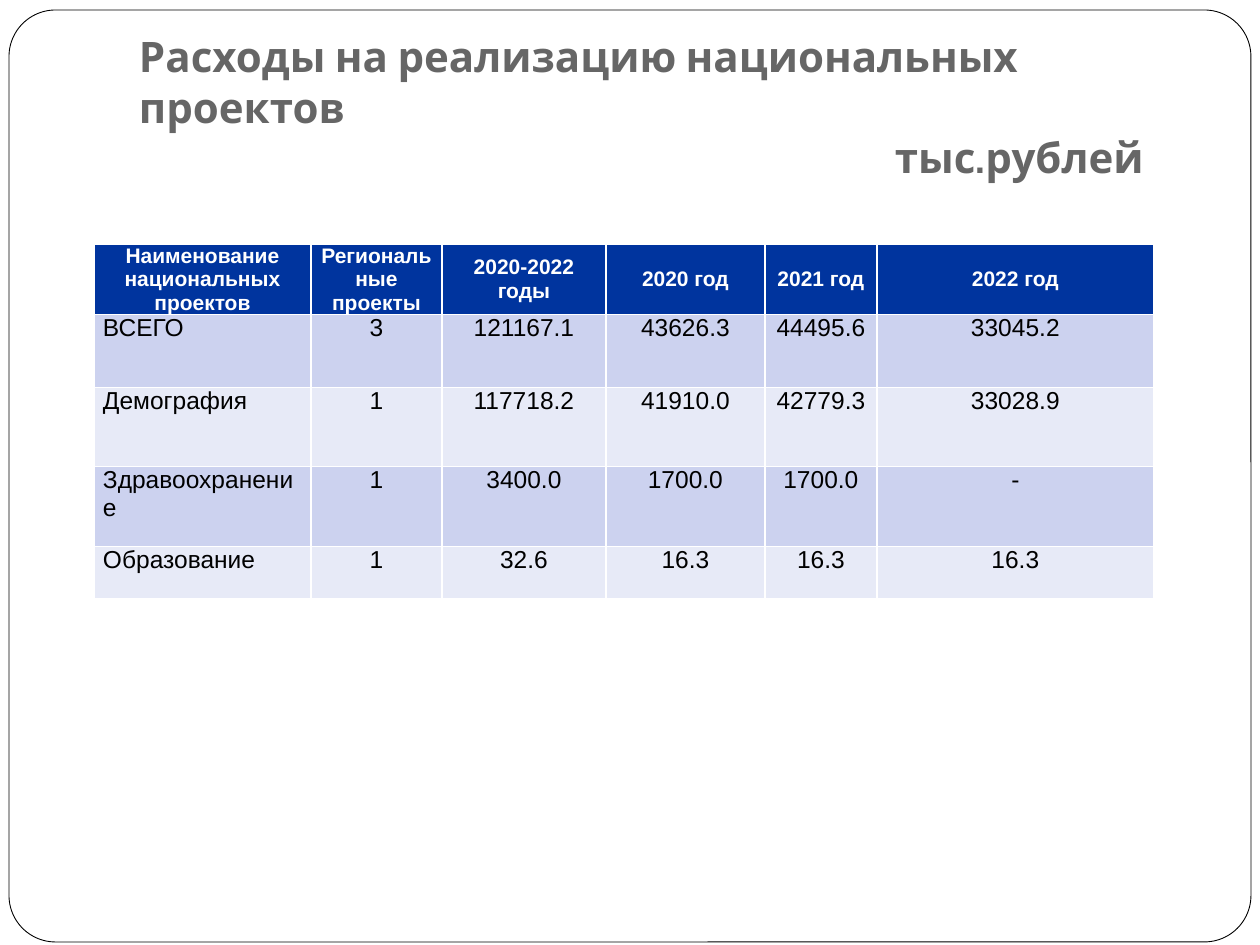
"""Build the slide with national project spending by year."""
from dataclasses import dataclass

from lxml import etree
from pptx import Presentation
from pptx import util as u
from pptx.dml.color import RGBColor
from pptx.enum import shapes, text
from pptx.oxml.ns import qn


@dataclass(frozen=True)
class Theme:
    title_font: str = "Cabin"
    body_font: str = "Arial"
    title_size: int = 24
    head_size: int = 12
    body_size: int = 14
    title: str = "666666"
    ink: str = "000000"
    paper: str = "FFFFFF"
    head: str = "00349E"
    bands: tuple = ("E7EAF7", "CCD2EF")


def px(n):
    return u.Emu(round(n * u.Inches(1) / 126))


def style(p, name, size, color, bold):
    p.font.name, p.font.size, p.font.bold = name, u.Pt(size), bold
    p.font.color.rgb = RGBColor.from_string(color)


theme = Theme()
prs = Presentation()
prs.slide_width, prs.slide_height = px(1260), px(945)
s = prs.slides.add_slide(prs.slide_layouts[5])

frame = s.shapes.add_shape(shapes.MSO_SHAPE.ROUNDED_RECTANGLE, px(9), px(10), px(1242), px(932))
frame.adjustments[0] = 0.05
frame.shadow.inherit = False
frame.fill.solid()
frame.fill.fore_color.rgb = RGBColor.from_string(theme.paper)
frame.line.color.rgb = RGBColor.from_string(theme.ink)
frame.line.width = u.Pt(0.5)

title = s.shapes.title
frame._element.addnext(title._element)
title.left, title.top, title.width, title.height = px(126), px(38), px(1071), px(157)
tf = title.text_frame
tf.auto_size = text.MSO_AUTO_SIZE.NONE
tf.word_wrap = True
tf.vertical_anchor = text.MSO_ANCHOR.BOTTOM
tf.margin_left = tf.margin_right = tf.margin_bottom = px(13)
tf.margin_top = px(6)
p = tf.paragraphs[0]
p.text = "Расходы на реализацию национальных проектов\v\tтыс.рублей"
p.alignment = text.PP_ALIGN.LEFT
style(p, theme.title_font, theme.title_size, theme.title, True)
tabs = etree.Element(qn("a:tabLst"))
etree.SubElement(tabs, qn("a:tab"), pos=str(px(756)), algn="l")
p._p.pPr.insert(0, tabs)

rows = [
    ("Наименование национальных проектов", "Региональные проекты", "2020-2022 годы",
     "2020 год", "2021 год", "2022 год"),
    ("ВСЕГО", "3", "121167.1", "43626.3", "44495.6", "33045.2"),
    ("Демография", "1", "117718.2", "41910.0", "42779.3", "33028.9"),
    ("Здравоохранение", "1", "3400.0", "1700.0", "1700.0", "-"),
    ("Образование", "1", "32.6", "16.3", "16.3", "16.3"),
]
widths = [217, 131, 164, 159, 112, 277]
heights = [52, 73, 79, 80, 52]
table = s.shapes.add_table(len(rows), len(widths), px(94), px(244),
                           px(sum(widths)), px(sum(heights))).table
for column, width in zip(table.columns, widths):
    column.width = px(width)
for i, (values, height) in enumerate(zip(rows, heights)):
    table.rows[i].height = px(height)
    is_head = i == 0
    for j, value in enumerate(values):
        cell = table.cell(i, j)
        cell.fill.solid()
        cell.fill.fore_color.rgb = RGBColor.from_string(theme.head if is_head else theme.bands[i % 2])
        cell.margin_left = cell.margin_right = px(9)
        cell.margin_top = cell.margin_bottom = 0
        cell.vertical_anchor = text.MSO_ANCHOR.MIDDLE if is_head else text.MSO_ANCHOR.TOP
        p = cell.text_frame.paragraphs[0]
        p.text = value
        p.alignment = text.PP_ALIGN.CENTER if is_head or j else text.PP_ALIGN.LEFT
        style(p, theme.body_font, theme.head_size if is_head else theme.body_size,
              theme.paper if is_head else theme.ink, is_head)

prs.save("out.pptx")
